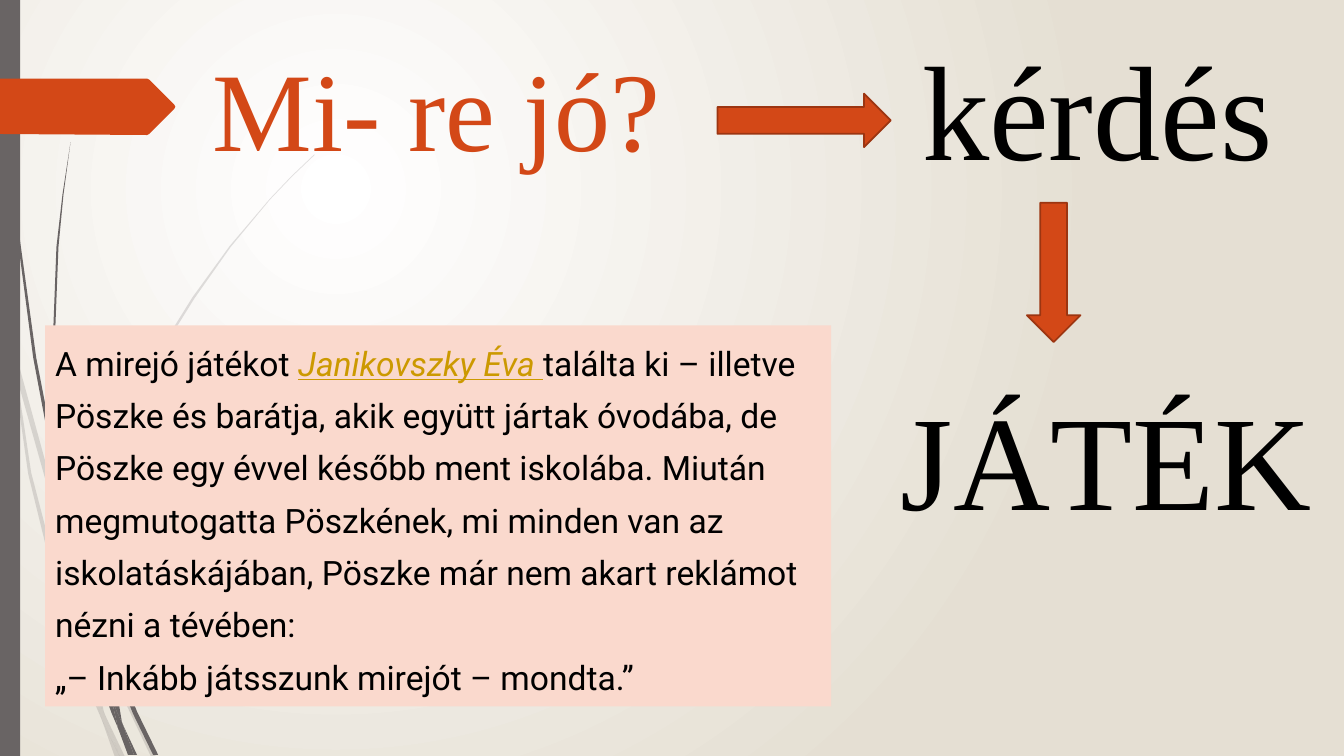
from pptx import Presentation, util as u
from pptx.dml import color
from pptx.enum import shapes, text
from pptx.oxml import ns
from lxml import etree

ORANGE, GREY, RUST, BLACK = "D34817", "696464", "9C3511", "000000"
SERIF = "Times New Roman"
HUNDREDTH_INCH = u.Cm(0.0254)

PALE_WISPS = [
    [(11, 350), (9, 322), (0, 282), (0, 299), (10, 344)],
    [(58, 522), (84, 599), (85, 586), (62, 520), (14, 345), (17, 376)],
    [(92, 607), (88, 596), (88, 610), (123, 694), (150, 751), (155, 751), (127, 692)],
    [(119, 751), (124, 751), (105, 711)],
    [(93, 683), (70, 619), (31, 469), (17, 376), (11, 350), (28, 470), (65, 621),
     (92, 693), (101, 714), (99, 707)],
    [(84, 599), (87, 646), (93, 683), (96, 692), (105, 711), (103, 706), (91, 646),
     (88, 610), (88, 608)],
    [(88, 584), (92, 530), (110, 462), (132, 404), (160, 349), (193, 296), (229, 245),
     (268, 198), (290, 175), (312, 154), (312, 153), (289, 175), (268, 197), (228, 244),
     (191, 295), (158, 348), (129, 403), (107, 461), (89, 530), (85, 584), (85, 586),
     (88, 596)],
    [(101, 714), (114, 751), (119, 751)],
    [(96, 692), (93, 683), (99, 707), (101, 714), (119, 751), (105, 711)],
]
DARK_WISPS = [
    [(7, 110), (17, 233), (33, 355), (56, 477), (57, 481), (55, 457), (55, 453),
     (36, 355), (19, 232), (8, 109), (5, 48), (4, 0), (3, 0), (4, 48)],
    [(113, 649), (110, 641), (111, 656), (132, 708), (152, 749), (157, 749), (136, 706)],
    [(110, 691), (98, 657), (72, 556), (64, 505), (57, 477), (68, 557), (93, 659),
     (111, 708), (117, 722), (116, 717)],
    [(60, 472), (58, 453), (54, 349), (58, 245), (63, 193), (70, 141), (62, 193),
     (56, 245), (52, 349), (55, 449)],
    [(133, 749), (136, 749), (122, 719)],
    [(117, 722), (127, 749), (131, 749)],
    [(106, 645), (110, 691), (116, 706), (122, 719), (121, 716), (111, 656), (109, 651)],
    [(116, 706), (110, 691), (116, 717), (117, 722), (130, 749), (133, 749), (122, 719)],
]
FLAG = [(0, 78), (146, 78), (148, 79), (173, 104), (174, 106), (173, 108),
        (148, 133), (146, 134), (0, 133)]


def rgb(value):
    return color.RGBColor.from_string(value)


def assign(target, values):
    for name, value in values.items():
        setattr(target, name, value)


def paint(shape, fill, line=None):
    shape.shadow.inherit = False
    shape.fill.solid()
    shape.fill.fore_color.rgb = rgb(fill)
    if line:
        shape.line.color.rgb = rgb(line)
        shape.line.width = u.Pt(1.25)
    else:
        shape.line.fill.background()


def add_outline(parent, points, fill, opacity=100):
    builder = parent.build_freeform(*points[0], scale=HUNDREDTH_INCH)
    builder.add_line_segments(points[1:], close=True)
    shape = builder.convert_to_shape()
    paint(shape, fill)
    if opacity < 100:
        tint = shape.fill._xPr.find(".//" + ns.qn("a:srgbClr"))
        etree.SubElement(tint, ns.qn("a:alpha"), val=str(opacity * 1000))


def add_preset(page, box, kind, fill, line=None):
    shape = page.shapes.add_shape(kind, *map(u.Cm, box))
    paint(shape, fill, line)
    return shape


def add_span(para, words, ink, **font):
    span = para.add_run()
    span.text = words
    assign(span.font, font)
    span.font.color.rgb = rgb(ink)


def draw_background(page):
    fill = page.background.fill
    fill.gradient()
    for stop, value in zip(fill.gradient_stops, ("FFFFFF", "E5DFD3")):
        stop.color.rgb = rgb(value)
    gradient = page.element.find(".//" + ns.qn("a:gradFill"))
    gradient.remove(gradient.find(ns.qn("a:lin")))
    circle = etree.SubElement(gradient, ns.qn("a:path"), path="circle")
    etree.SubElement(circle, ns.qn("a:fillToRect"),
                     l="50000", t="50000", r="100000", b="100000")


def draw_left_edge(page, box):
    for wisps, opacity in ((PALE_WISPS, 20), (DARK_WISPS, 100)):
        group = page.shapes.add_group_shape()
        for points in wisps:
            add_outline(group.shapes, points, GREY, opacity)
    add_preset(page, box, shapes.MSO_SHAPE.RECTANGLE, GREY)
    add_outline(page.shapes, FLAG, ORANGE)


def draw_word(page, box, words, size, ink):
    frame = page.shapes.add_textbox(*map(u.Cm, box)).text_frame
    assign(frame, {"word_wrap": False, "auto_size": text.MSO_AUTO_SIZE.SHAPE_TO_FIT_TEXT})
    add_span(frame.paragraphs[0], words, ink, name=SERIF, size=u.Pt(size))


def draw_story(page, box):
    frame = add_preset(page, box, shapes.MSO_SHAPE.RECTANGLE, "FAD9CD").text_frame
    assign(frame, {"word_wrap": True, "vertical_anchor": text.MSO_ANCHOR.TOP,
                   "auto_size": text.MSO_AUTO_SIZE.SHAPE_TO_FIT_TEXT})
    para = frame.paragraphs[0]
    assign(para, {"alignment": text.PP_ALIGN.LEFT, "line_spacing": 1.3})
    body = {"name": "Roboto", "size": u.Pt(24)}
    add_span(para, "A mirejó játékot ", BLACK, **body)
    add_span(para, "Janikovszky Éva ", "CC9900", italic=True, underline=True, **body)
    add_span(para, "találta ki – illetve Pöszke és barátja, akik együtt jártak óvodába, "
                   "de Pöszke egy évvel később ment iskolába. Miután megmutogatta "
                   "Pöszkének, mi minden van az iskolatáskájában, Pöszke már nem akart "
                   "reklámot nézni a tévében: ", BLACK, **body)
    para.add_line_break()
    add_span(para, "„– Inkább játsszunk mirejót – mondta.”", BLACK, **body)


def main():
    deck = Presentation()
    assign(deck, {"slide_width": u.Cm(33.87), "slide_height": u.Cm(19.05)})
    page = deck.slides.add_slide(deck.slide_layouts[6])
    draw_background(page)
    draw_left_edge(page, (0, 0, 0.51, 19.05))
    draw_word(page, (5.11, 0.86, 11.91, 3.68), "Mi- re jó?", 80, ORANGE)
    add_preset(page, (18.08, 2.36, 4.37, 1.35), shapes.MSO_SHAPE.RIGHT_ARROW, ORANGE, RUST)
    draw_word(page, (22.99, 0.53, 9.45, 4.37), "kérdés", 96, BLACK)
    draw_story(page, (1.14, 8.2, 19.81, 9.6))
    add_preset(page, (25.88, 5.11, 1.35, 3.51), shapes.MSO_SHAPE.DOWN_ARROW, ORANGE, RUST)
    draw_word(page, (22.45, 9.35, 10.97, 4.37), "JÁTÉK", 96, BLACK)
    deck.save("out.pptx")


if __name__ == "__main__":
    main()
